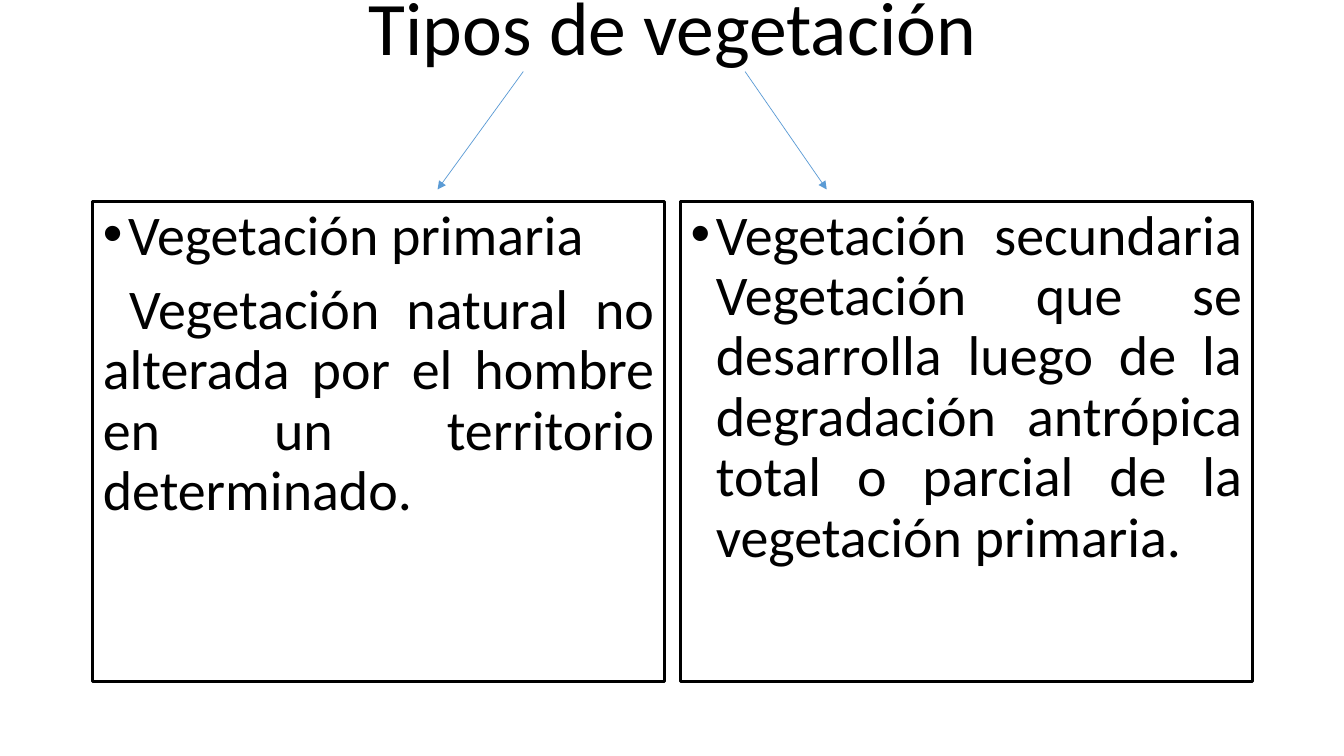
from lxml.etree import SubElement
from pptx import Presentation
from pptx.dml.color import RGBColor
from pptx.enum.shapes import MSO_CONNECTOR
from pptx.enum.text import MSO_ANCHOR, MSO_AUTO_SIZE, PP_ALIGN
from pptx.oxml.ns import qn
from pptx.util import Inches, Pt

COLORS = {"text": "000000", "arrow": "5B9BD5", "background": "FFFFFF"}
FONT = "Calibri"
COLUMN_WIDTH = 5.67
COLUMN_LEFTS = (0.92, 6.75)


def color(name):
    """Return the named colour."""
    return RGBColor.from_string(COLORS[name])


def place(shape, left, top, width, height):
    """Move and size a shape, in inches."""
    shape.left, shape.top = Inches(left), Inches(top)
    shape.width, shape.height = Inches(width), Inches(height)


def prepare_frame(shape, anchor):
    """Make the text wrap at a fixed size and return its frame."""
    frame = shape.text_frame
    frame.word_wrap = True
    frame.auto_size = MSO_AUTO_SIZE.NONE
    frame.vertical_anchor = anchor
    return frame


def write_paragraph(paragraph, text, size, alignment, space_before=0):
    """Write one formatted run into a paragraph."""
    paragraph.alignment = alignment
    paragraph.line_spacing = 0.9
    paragraph.space_before = Pt(space_before)
    run = paragraph.add_run()
    run.text = text
    run.font.name = FONT
    run.font.size = Pt(size)
    run.font.color.rgb = color("text")


def set_bullet(paragraph, bullet, margin, indent):
    """Set the bullet, or none, and the indents of a paragraph."""
    properties = paragraph._p.get_or_add_pPr()
    properties.set("marL", str(Inches(margin)))
    properties.set("indent", str(Inches(indent)))
    if bullet:
        SubElement(properties, qn("a:buFont"), typeface="Arial")
        SubElement(properties, qn("a:buChar"), char=bullet)
    else:
        SubElement(properties, qn("a:buNone"))


def add_title(slide, text):
    """Fill the title placeholder."""
    title = slide.shapes.title
    place(title, 0.92, 0, 11.5, 1.43)
    frame = prepare_frame(title, MSO_ANCHOR.MIDDLE)
    frame.margin_bottom = Inches(0.87)
    write_paragraph(frame.paragraphs[0], text, 54, PP_ALIGN.CENTER)


def fill_column(placeholder, left, bulleted, description=None):
    """Fill an outlined column with a bulleted text and a description."""
    place(placeholder, left, 2, COLUMN_WIDTH, 4.76)
    placeholder.line.color.rgb = color("text")
    placeholder.line.width = Pt(2.25)
    frame = prepare_frame(placeholder, MSO_ANCHOR.TOP)
    first = frame.paragraphs[0]
    set_bullet(first, "•", 0.25, -0.25)
    write_paragraph(first, bulleted, 40, PP_ALIGN.JUSTIFY)
    if description:
        second = frame.add_paragraph()
        set_bullet(second, None, 0, 0.26)
        write_paragraph(second, description, 40, PP_ALIGN.JUSTIFY, 10)


def add_arrow(slide, start_x, end_x):
    """Draw an arrow from the title down to a column."""
    arrow = slide.shapes.add_connector(
        MSO_CONNECTOR.STRAIGHT,
        Inches(start_x), Inches(0.71), Inches(end_x), Inches(1.88),
    )
    arrow.line.color.rgb = color("arrow")
    arrow.line.width = Pt(0.5)
    SubElement(arrow.line._get_or_add_ln(), qn("a:tailEnd"), type="triangle")
    SubElement(arrow._element.spPr, qn("a:effectLst"))


def main():
    """Build and save the slide."""
    presentation = Presentation()
    presentation.slide_width = Inches(13.33)
    presentation.slide_height = Inches(7.5)
    slide = presentation.slides.add_slide(presentation.slide_layouts[3])
    slide.background.fill.solid()
    slide.background.fill.fore_color.rgb = color("background")

    add_title(slide, "Tipos de vegetación")
    primary_left, secondary_left = COLUMN_LEFTS
    fill_column(
        slide.placeholders[1], primary_left, "Vegetación primaria",
        "Vegetación natural no alterada por el hombre en un territorio "
        "determinado.",
    )
    fill_column(
        slide.placeholders[2], secondary_left,
        "Vegetación secundaria Vegetación que se desarrolla luego de la "
        "degradación antrópica total o parcial de la vegetación primaria.",
    )
    for start_x, end_x in ((5.19, 4.34), (7.39, 8.2)):
        add_arrow(slide, start_x, end_x)

    presentation.save("out.pptx")


if __name__ == "__main__":
    main()
